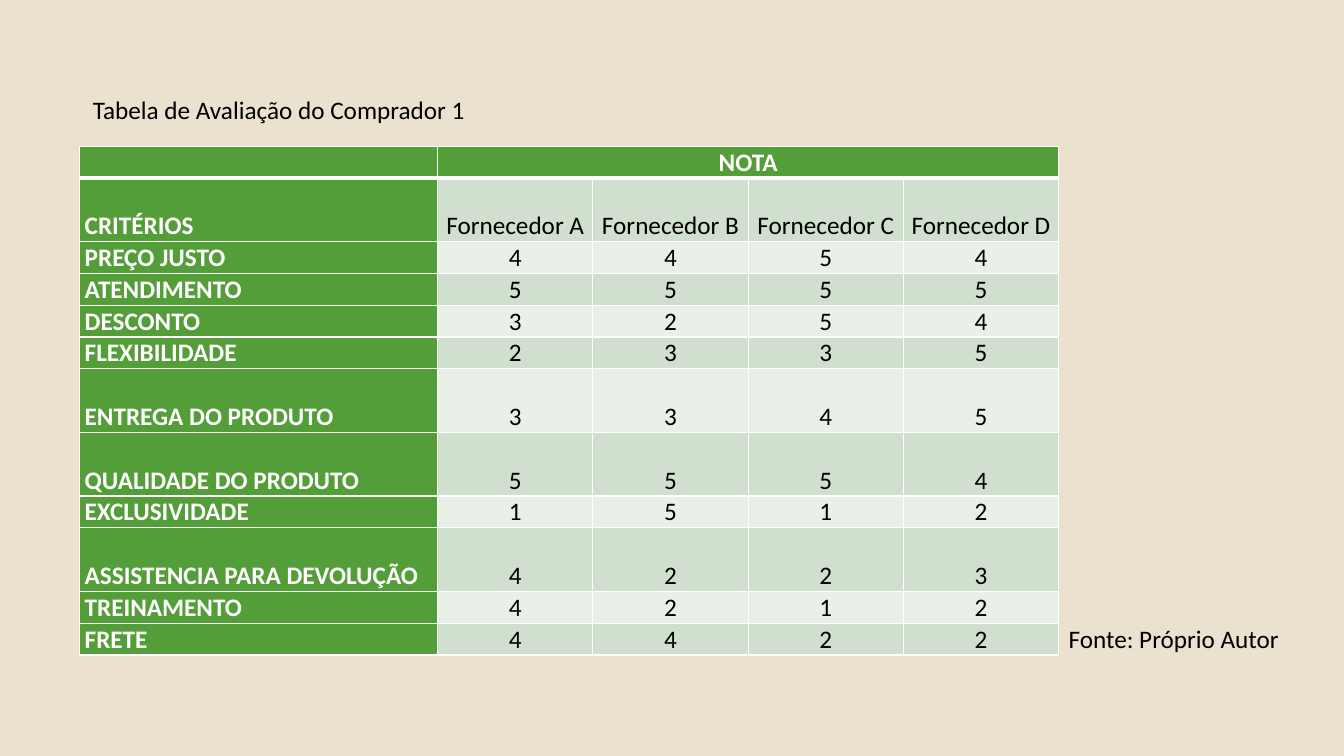
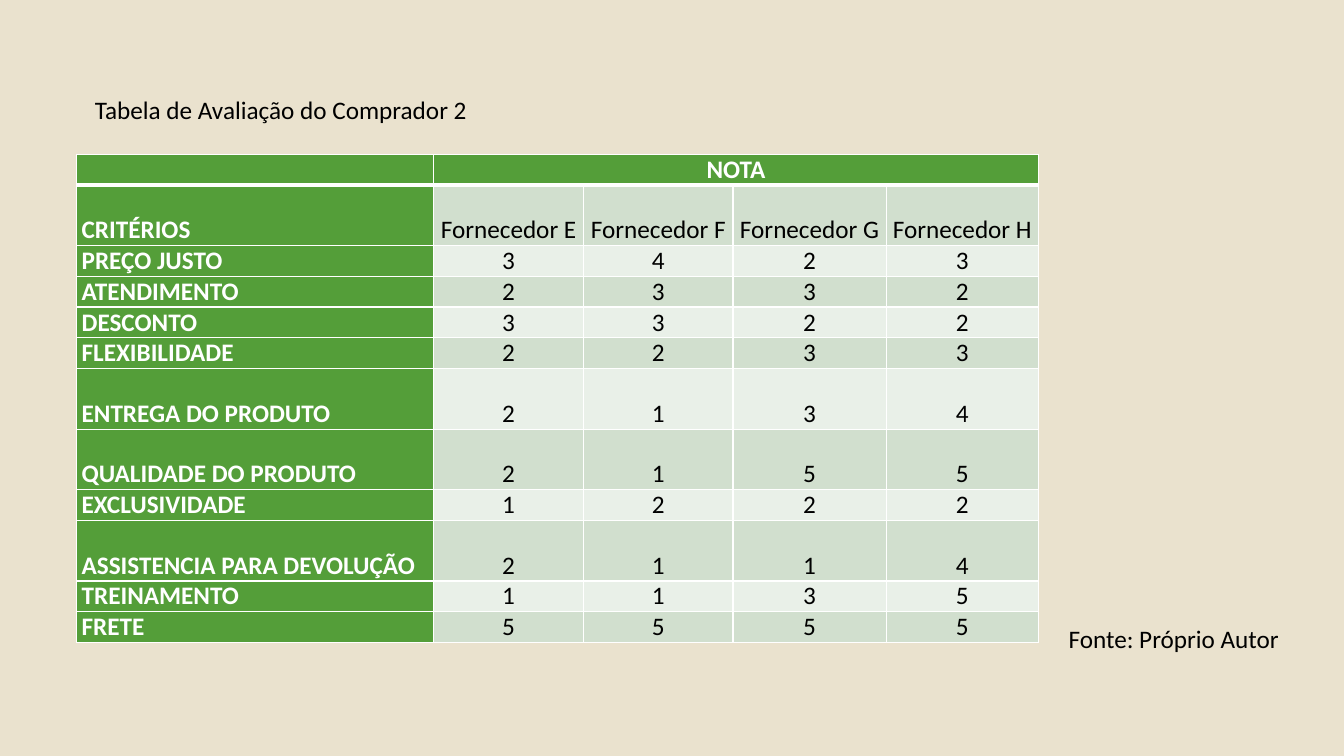
from lxml import etree
from pptx import Presentation
from pptx.dml.color import RGBColor
from pptx.enum.text import MSO_ANCHOR, PP_ALIGN
from pptx.oxml.ns import qn
from pptx.util import Inches, Pt

LEFT, CENTER = PP_ALIGN.LEFT, PP_ALIGN.CENTER
TOP, BOTTOM = MSO_ANCHOR.TOP, MSO_ANCHOR.BOTTOM

BACKGROUND, GREEN, WHITE, BLACK = "EAE2CE", "549E39", "FFFFFF", "000000"
BANDS = ["E9F0E8", "D1DFCE"]
TITLE_ONLY = 5

CRITERIA = [
    "PREÇO JUSTO", "ATENDIMENTO", "DESCONTO", "FLEXIBILIDADE",
    "ENTREGA DO PRODUTO", "QUALIDADE DO PRODUTO", "EXCLUSIVIDADE",
    "ASSISTENCIA PARA DEVOLUÇÃO", "TREINAMENTO", "FRETE",
]
ROW_UNITS = [1, 2, 1, 1, 1, 1, 2, 2, 1, 2, 1, 1]

EVALUATIONS = [
    {
        "title": "Tabela de Avaliação do Comprador 1", "title_left": 0.82,
        "left": 0.79, "top": 1.45, "height": 5.05,
        "columns": [3.55, 1.54, 1.54, 1.54, 1.54],
        "suppliers": "ABCD",
        "scores": ["4454", "5555", "3254", "2335", "3345",
                   "5554", "1512", "4223", "4212", "4422"],
    },
    {
        "title": "Tabela de Avaliação do Comprador 2", "title_left": 0.84,
        "left": 0.76, "top": 1.53, "height": 4.8,
        "columns": [3.54, 1.49, 1.48, 1.52, 1.51],
        "suppliers": "EFGH",
        "scores": ["3423", "2332", "3322", "2233", "2134",
                   "2155", "1222", "2114", "1135", "5555"],
    },
]


def write(text_frame, text, color=BLACK, bold=False, align=LEFT):
    paragraph = text_frame.paragraphs[0]
    paragraph.alignment = align
    run = paragraph.add_run()
    run.text = text
    run.font.name = "Calibri"
    run.font.size = Pt(18)
    run.font.bold = bold
    run.font.color.rgb = RGBColor.from_string(color)


def set_borders(cell, **widths):
    properties = cell._tc.get_or_add_tcPr()
    for side in "LRTB":
        width = Pt(widths.get(side, 1))
        line = etree.SubElement(properties, qn(f"a:ln{side}"), w=str(width))
        fill = etree.SubElement(line, qn("a:solidFill"))
        etree.SubElement(fill, qn("a:srgbClr"), val=WHITE)


presentation = Presentation()
presentation.slide_width = Inches(13.33)
presentation.slide_height = Inches(7.5)
background = presentation.slide_master.background.fill
background.solid()
background.fore_color.rgb = RGBColor.from_string(BACKGROUND)

for evaluation in EVALUATIONS:
    slide = presentation.slides.add_slide(presentation.slide_layouts[TITLE_ONLY])

    title = slide.shapes.title
    title.left, title.top = Inches(evaluation["title_left"]), Inches(0.89)
    title.width, title.height = Inches(8.97), Inches(0.4)
    title.text_frame.vertical_anchor = TOP
    write(title.text_frame, evaluation["title"])

    rows = [["", "NOTA", "", "", ""]]
    rows.append(["CRITÉRIOS"] + [f"Fornecedor {letter}" for letter in evaluation["suppliers"]])
    rows += [[name, *scores] for name, scores in zip(CRITERIA, evaluation["scores"])]

    columns = evaluation["columns"]
    table = slide.shapes.add_table(
        len(rows), len(columns), Inches(evaluation["left"]), Inches(evaluation["top"]),
        Inches(sum(columns)), Inches(evaluation["height"])).table
    table.horz_banding = False
    for column, width in zip(table.columns, columns):
        column.width = Inches(width)
    unit = evaluation["height"] / sum(ROW_UNITS)
    for row, units in zip(table.rows, ROW_UNITS):
        row.height = Inches(unit * units)
    table.cell(0, 1).merge(table.cell(0, 4))

    for row_index, row in enumerate(rows):
        for column_index, text in enumerate(row):
            cell = table.cell(row_index, column_index)
            heading = row_index == 0 or column_index == 0
            cell.margin_left = cell.margin_right = Inches(0.05)
            cell.margin_top = cell.margin_bottom = 0
            cell.vertical_anchor = BOTTOM
            set_borders(cell, T=3 if row_index == 1 else 1, B=3 if row_index == 0 else 1)
            cell.fill.solid()
            color = GREEN if heading else BANDS[row_index % 2]
            cell.fill.fore_color.rgb = RGBColor.from_string(color)
            if text:
                write(cell.text_frame, text, color=WHITE if heading else BLACK,
                      bold=heading, align=CENTER if column_index else LEFT)

    source = slide.shapes.add_textbox(Inches(10.5), Inches(6.13), Inches(2.55), Inches(0.71))
    source.text_frame.word_wrap = True
    write(source.text_frame, "Fonte: Próprio Autor")

presentation.save("out.pptx")
